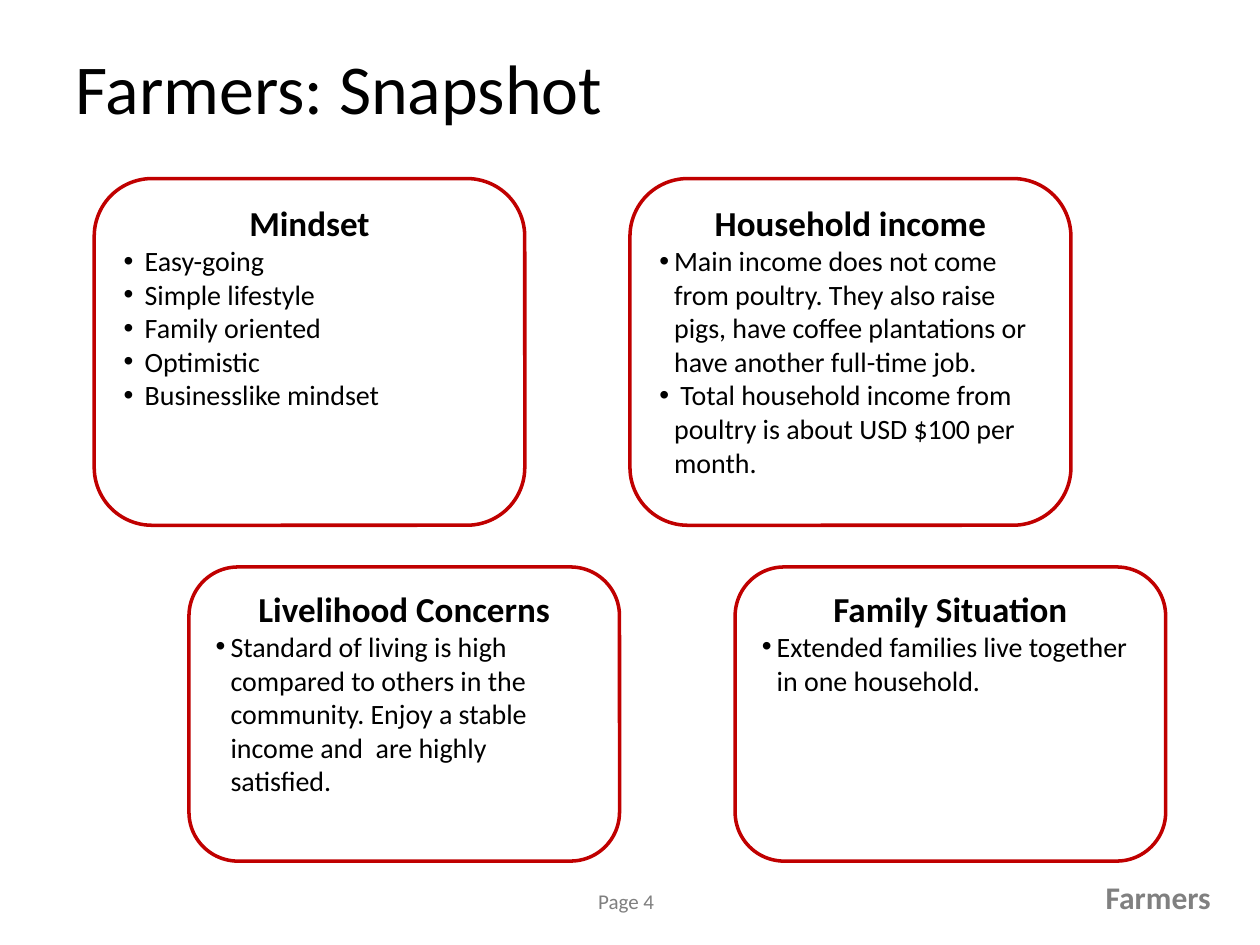
"""Build the farmers snapshot slide with four outlined cards."""
from dataclasses import dataclass

import lxml.etree
import pptx
import pptx.dml.color
import pptx.enum.shapes
import pptx.enum.text
import pptx.oxml.ns
import pptx.util

Cm = pptx.util.Cm
Pt = pptx.util.Pt
ALIGN = pptx.enum.text.PP_ALIGN
ANCHOR = pptx.enum.text.MSO_ANCHOR

COLORS = {"text": "000000", "outline": "C00000", "page": "7F7F7F", "section": "808080"}
FORMATS = {
    "title": {"size": Pt(40), "bold": False},
    "heading": {"size": Pt(20), "bold": True},
    "body": {"size": Pt(16), "bold": False},
    "page": {"size": Pt(12), "bold": False},
    "section": {"size": Pt(18), "bold": True},
}
BULLET_INDENT = Cm(0.3)


@dataclass(frozen=True)
class Area:
    """Position and size in centimetres."""

    left: float
    top: float
    width: float
    height: float

    def lengths(self) -> tuple:
        """Return the four values as lengths."""
        return Cm(self.left), Cm(self.top), Cm(self.width), Cm(self.height)


@dataclass(frozen=True)
class Card:
    """A rounded card with a heading and bullets."""

    area: Area
    heading: str
    bullets: tuple[str, ...]


@dataclass(frozen=True)
class Label:
    """A single line of free text."""

    area: Area
    text: str
    style: str
    color: str
    align: ALIGN = ALIGN.LEFT
    anchor: ANCHOR = ANCHOR.TOP
    wrap: bool = False


CARDS = (
    Card(
        Area(1.9, 3.6, 8.68, 6.99),
        "Mindset",
        (" Easy-going", " Simple lifestyle", " Family oriented", " Optimistic", " Businesslike mindset"),
    ),
    Card(
        Area(12.7, 3.6, 8.89, 6.99),
        "Household income",
        (
            "Main income does not come from poultry. They also raise pigs, "
            "have coffee plantations or have another full-time job.",
            " Total household income from poultry is about USD $100 per month.",
        ),
    ),
    Card(
        Area(3.81, 11.43, 8.68, 5.93),
        "Livelihood Concerns",
        (
            "Standard of living is high compared to others in the community. "
            "Enjoy a stable income and  are highly satisfied.",
        ),
    ),
    Card(
        Area(14.82, 11.43, 8.68, 5.93),
        "Family Situation",
        ("Extended families live together in one household.",),
    ),
)
LABELS = (
    Label(Area(1.27, 0.76, 22.86, 1.98), "Farmers: Snapshot", "title", "text", anchor=ANCHOR.MIDDLE, wrap=True),
    Label(Area(11.81, 17.78, 1.96, 0.76), "Page 4", "page", "page"),
    Label(Area(22.02, 17.58, 2.64, 1.02), "Farmers", "section", "section", ALIGN.RIGHT),
)


def rgb(name: str) -> pptx.dml.color.RGBColor:
    """Return a named colour."""
    return pptx.dml.color.RGBColor.from_string(COLORS[name])


def write(para, text: str, style: str, color: str, align: ALIGN) -> None:
    """Write one formatted span into a paragraph."""
    para.alignment = align
    span = para.add_run()
    span.text = text
    for name, value in {"name": "Calibri", **FORMATS[style]}.items():
        setattr(span.font, name, value)
    span.font.color.rgb = rgb(color)


def add_bullet(para) -> None:
    """Give a paragraph a hanging bullet."""
    properties = para._p.get_or_add_pPr()
    for name, value in {"marL": BULLET_INDENT, "indent": -BULLET_INDENT}.items():
        properties.set(name, str(int(value)))
    for tag, name, value in (("a:buFont", "typeface", "Arial"), ("a:buChar", "char", "•")):
        lxml.etree.SubElement(properties, pptx.oxml.ns.qn(tag)).set(name, value)


def draw_card(page, card: Card) -> None:
    """Draw a card with its heading and bullets."""
    box = page.shapes.add_shape(
        pptx.enum.shapes.MSO_SHAPE.ROUNDED_RECTANGLE, *card.area.lengths()
    )
    box.shadow.inherit = False
    box.fill.background()
    box.line.color.rgb = rgb("outline")
    box.line.width = Pt(2)
    frame = box.text_frame
    frame.word_wrap = True
    frame.vertical_anchor = ANCHOR.TOP
    write(frame.paragraphs[0], card.heading, "heading", "text", ALIGN.CENTER)
    for bullet in card.bullets:
        para = frame.add_paragraph()
        write(para, bullet, "body", "text", ALIGN.LEFT)
        add_bullet(para)


def draw_label(page, label: Label) -> None:
    """Draw a line of free text."""
    frame = page.shapes.add_textbox(*label.area.lengths()).text_frame
    frame.word_wrap = label.wrap
    frame.vertical_anchor = label.anchor
    write(frame.paragraphs[0], label.text, label.style, label.color, label.align)


def main() -> None:
    """Build and save the deck."""
    deck = pptx.Presentation()
    deck.slide_width, deck.slide_height = Cm(25.4), Cm(19.05)
    page = deck.slides.add_slide(deck.slide_layouts[6])
    for label in LABELS:
        draw_label(page, label)
    for card in CARDS:
        draw_card(page, card)
    deck.save("out.pptx")


if __name__ == "__main__":
    main()
